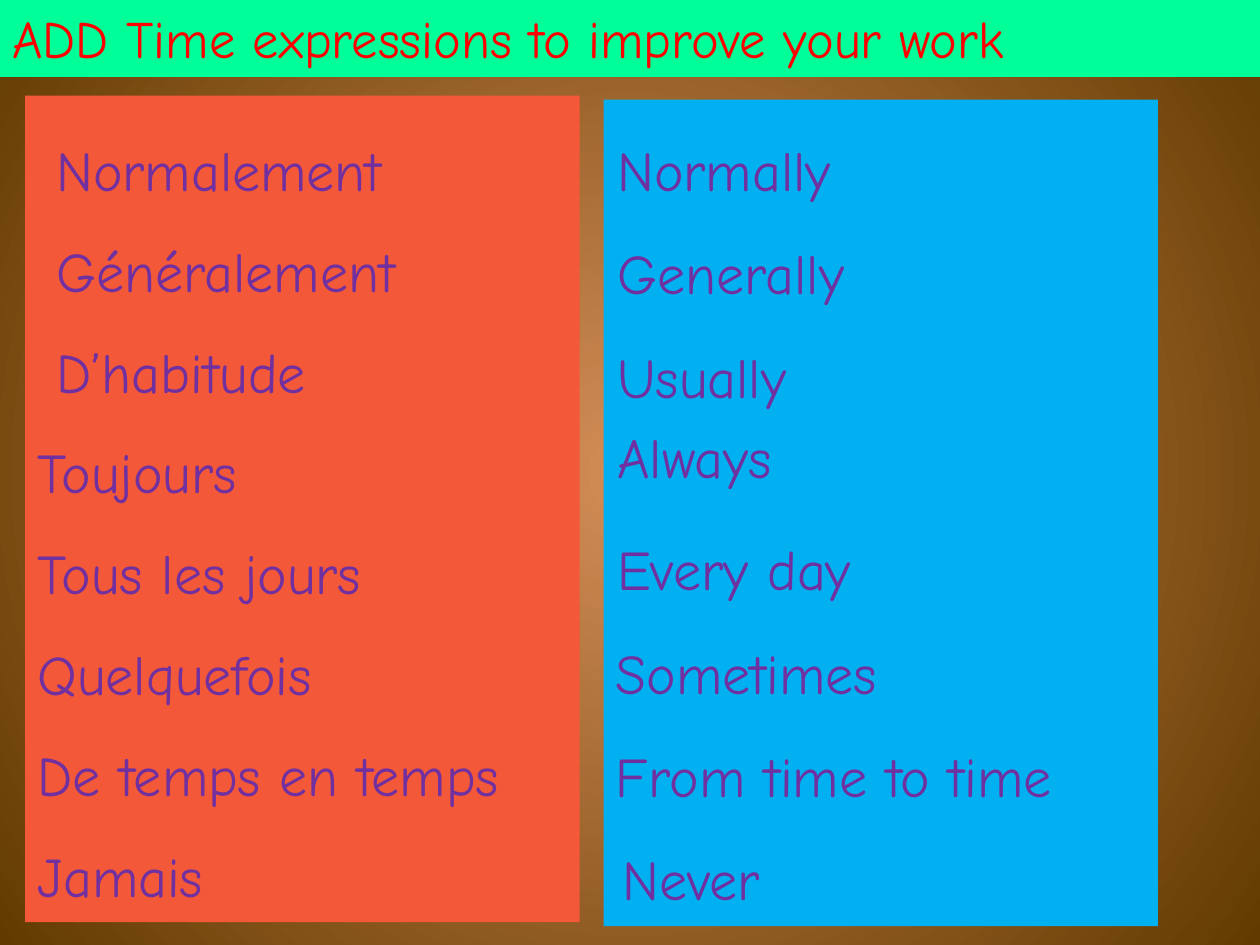
import dataclasses

import lxml.etree
import pptx
import pptx.dml.color
import pptx.enum.shapes
import pptx.enum.text
import pptx.oxml.ns
import pptx.util

Inches = pptx.util.Inches


@dataclasses.dataclass(frozen=True)
class Theme:
    font: str = "Comic Neue"
    title_size: int = 30
    word_size: int = 32
    line_spacing: float = 1.5
    title_text: str = "FF0000"
    word_text: str = "7030A0"
    title_band: str = "00FF99"
    french_panel: str = "F35839"
    english_panel: str = "00B0F0"
    glow: str = "D38D57"
    edge: str = "623A00"


THEME = Theme()

TITLE = "ADD Time expressions to improve your work"
FRENCH = [
    " Normalement", " Généralement", " D’habitude", "Toujours",
    "Tous les jours", "Quelquefois", "De temps en temps", "Jamais",
]
# Each English word with the left and top of its box
ENGLISH = [
    ("Normally", 4.8, 0.76), ("Generally", 4.8, 1.58),
    ("Usually", 4.8, 2.4), ("Always", 4.8, 3.04),
    ("Every day", 4.8, 3.93), ("Sometimes", 4.79, 4.75),
    ("From time to time", 4.79, 5.57), ("Never", 4.84, 6.39),
]


def rgb(value):
    return pptx.dml.color.RGBColor.from_string(value)


def apply_format(target, values):
    for name, value in values.items():
        setattr(target, name, value)


def paint_background(page):
    """Fill the page with a gradient that spreads from its centre."""
    fill = page.background.fill
    fill.gradient()
    for stop, color in zip(fill.gradient_stops, (THEME.glow, THEME.edge)):
        stop.color.rgb = rgb(color)
    qn = pptx.oxml.ns.qn
    linear = next(page.element.iter(qn("a:lin")))
    gradient = linear.getparent()
    circle = lxml.etree.Element(qn("a:path"), {"path": "circle"})
    center = dict.fromkeys("ltrb", "50000")
    lxml.etree.SubElement(circle, qn("a:fillToRect"), center)
    gradient.replace(linear, circle)


def write_lines(box, lines, size, color, spacing=None):
    frame = box.text_frame
    apply_format(frame, {
        "word_wrap": True,
        "auto_size": pptx.enum.text.MSO_AUTO_SIZE.SHAPE_TO_FIT_TEXT,
        "vertical_anchor": pptx.enum.text.MSO_ANCHOR.TOP,
    })
    for index, line in enumerate(lines):
        para = frame.add_paragraph() if index else frame.paragraphs[0]
        apply_format(para, {
            "alignment": pptx.enum.text.PP_ALIGN.LEFT,
            "line_spacing": spacing,
        })
        span = para.add_run()
        span.text = line
        apply_format(span.font, {"name": THEME.font, "size": pptx.util.Pt(size)})
        span.font.color.rgb = rgb(color)


def add_panel(page, left, top, width, height, color):
    panel = page.shapes.add_shape(
        pptx.enum.shapes.MSO_SHAPE.RECTANGLE,
        Inches(left), Inches(top), Inches(width), Inches(height))
    panel.shadow.inherit = False
    panel.fill.solid()
    panel.fill.fore_color.rgb = rgb(color)
    panel.line.fill.background()
    return panel


def add_word(page, word, left, top):
    box = page.shapes.add_textbox(
        Inches(left), Inches(top), Inches(4.02), Inches(0.82))
    write_lines(box, [word], THEME.word_size, THEME.word_text,
                THEME.line_spacing)


def main():
    deck = pptx.Presentation()
    apply_format(deck, {"slide_width": Inches(10), "slide_height": Inches(7.5)})
    page = deck.slides.add_slide(deck.slide_layouts[6])
    paint_background(page)

    # Title band
    band = add_panel(page, 0, 0, 10, 0.61, THEME.title_band)
    write_lines(band, [TITLE], THEME.title_size, THEME.title_text)

    # French column
    french = add_panel(page, 0.2, 0.76, 4.4, 6.56, THEME.french_panel)
    write_lines(french, FRENCH, THEME.word_size, THEME.word_text,
                THEME.line_spacing)

    # English column
    add_panel(page, 4.79, 0.79, 4.4, 6.56, THEME.english_panel)
    for word, left, top in ENGLISH:
        add_word(page, word, left, top)

    deck.save("out.pptx")


if __name__ == "__main__":
    main()
